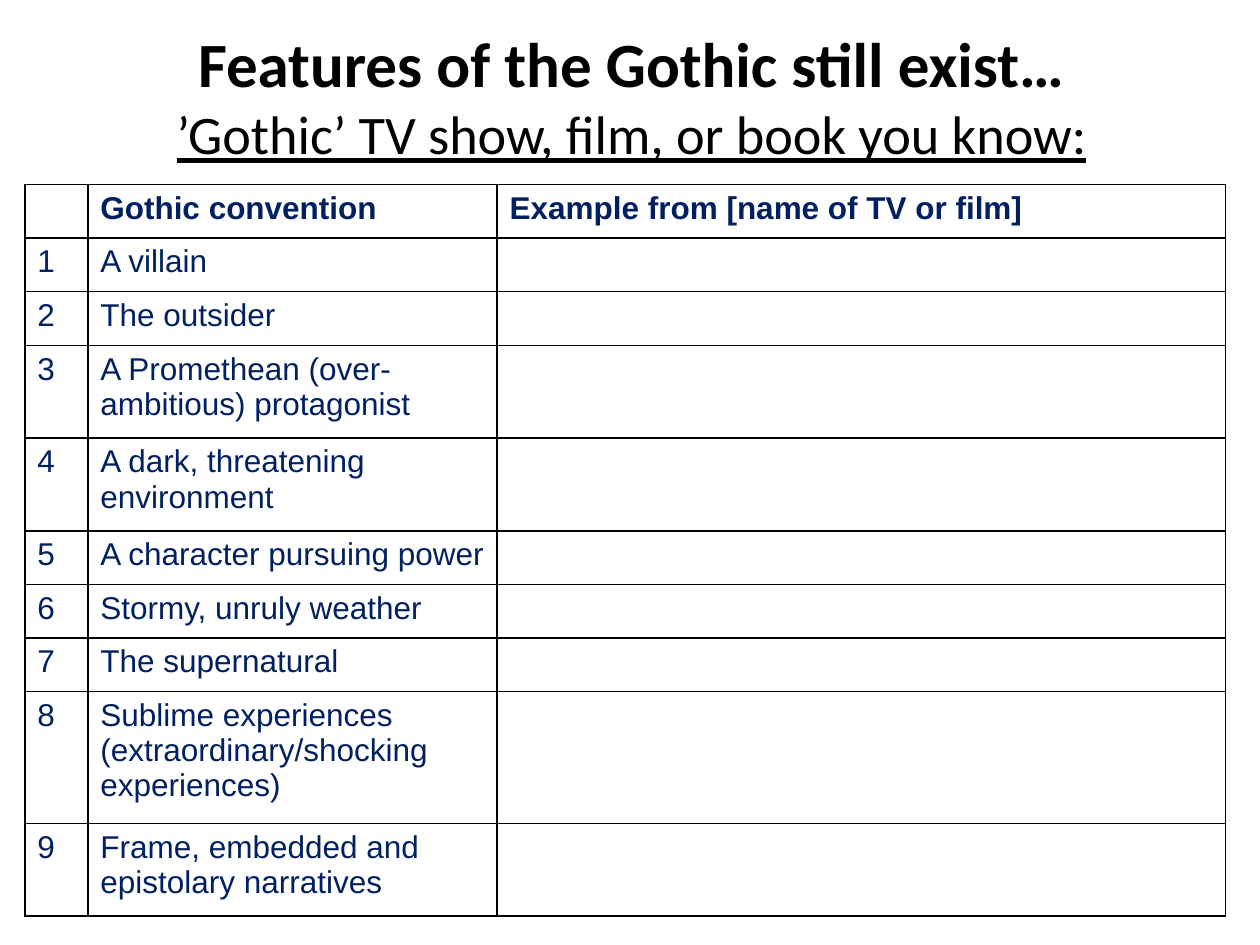
from lxml.etree import SubElement
from pptx import Presentation
from pptx.dml.color import RGBColor
from pptx.enum.text import MSO_ANCHOR, PP_ALIGN
from pptx.oxml.ns import qn
from pptx.util import Cm, Pt

COLORS = {"title": "000000", "text": "002060", "cell": "FFFFFF", "border": "000000"}

HEADLINE = "Features of the Gothic still exist…"
PROMPT = "’Gothic’ TV show, film, or book you know:"
HEADINGS = ("", "Gothic convention", "Example from [name of TV or film]")
CONVENTIONS = [
    ("A villain", 1),
    ("The outsider", 1),
    ("A Promethean (over-ambitious) protagonist", 2),
    ("A dark, threatening environment", 2),
    ("A character pursuing power", 1),
    ("Stormy, unruly weather", 1),
    ("The supernatural", 1),
    ("Sublime experiences (extraordinary/shocking experiences)", 3),
    ("Frame, embedded and epistolary narratives", 2),
]
COLUMN_WIDTHS = (1.27, 8.25, 14.68)
FIRST_LINE, EXTRA_LINE = 1.08, 0.79

HEADLINE_FONT = {"name": "Calibri", "size": Pt(36), "bold": True}
PROMPT_FONT = {"name": "Calibri", "size": Pt(31), "bold": False, "underline": True}
HEADING_FONT = {"name": "Arial", "size": Pt(18), "bold": True}
BODY_FONT = {**HEADING_FONT, "bold": False}


def set_font(font, values, color):
    for attribute, value in values.items():
        setattr(font, attribute, value)
    font.color.rgb = RGBColor.from_string(COLORS[color])


def set_borders(cell):
    properties = cell._tc.get_or_add_tcPr()
    for position, side in enumerate(("lnL", "lnR", "lnT", "lnB")):
        line = SubElement(properties, qn(f"a:{side}"), w=str(Pt(1)))
        fill = SubElement(line, qn("a:solidFill"))
        SubElement(fill, qn("a:srgbClr"), val=COLORS["border"])
        properties.insert(position, line)


def add_title(slide):
    frame = slide.shapes.add_textbox(Cm(1.3), Cm(0.33), Cm(22.86), Cm(3.18)).text_frame
    frame.word_wrap = True
    frame.vertical_anchor = MSO_ANCHOR.MIDDLE
    title = frame.paragraphs[0]
    title.alignment = PP_ALIGN.CENTER
    headline = title.add_run()
    headline.text = HEADLINE
    set_font(headline.font, HEADLINE_FONT, "title")
    title.add_line_break()
    prompt = title.add_run()
    prompt.text = PROMPT
    set_font(prompt.font, PROMPT_FONT, "title")


def add_conventions(slide):
    rows = [(HEADINGS, 1)]
    rows += [((str(number), name, ""), lines)
             for number, (name, lines) in enumerate(CONVENTIONS, 1)]
    heights = [FIRST_LINE + EXTRA_LINE * (lines - 1) for _, lines in rows]
    table = slide.shapes.add_table(
        len(rows), len(COLUMN_WIDTHS), Cm(0.5), Cm(3.72),
        Cm(sum(COLUMN_WIDTHS)), Cm(sum(heights))).table
    for column, width in zip(table.columns, COLUMN_WIDTHS):
        column.width = Cm(width)
    for index, (texts, _) in enumerate(rows):
        table.rows[index].height = Cm(heights[index])
        for cell, text in zip(table.rows[index].cells, texts):
            cell.text = text
            set_font(cell.text_frame.paragraphs[0].font,
                     BODY_FONT if index else HEADING_FONT, "text")
            cell.fill.solid()
            cell.fill.fore_color.rgb = RGBColor.from_string(COLORS["cell"])
            set_borders(cell)


def main():
    presentation = Presentation()
    presentation.slide_width, presentation.slide_height = Cm(25.4), Cm(19.05)
    slide = presentation.slides.add_slide(presentation.slide_layouts[6])
    add_title(slide)
    add_conventions(slide)
    presentation.save("out.pptx")


if __name__ == "__main__":
    main()
